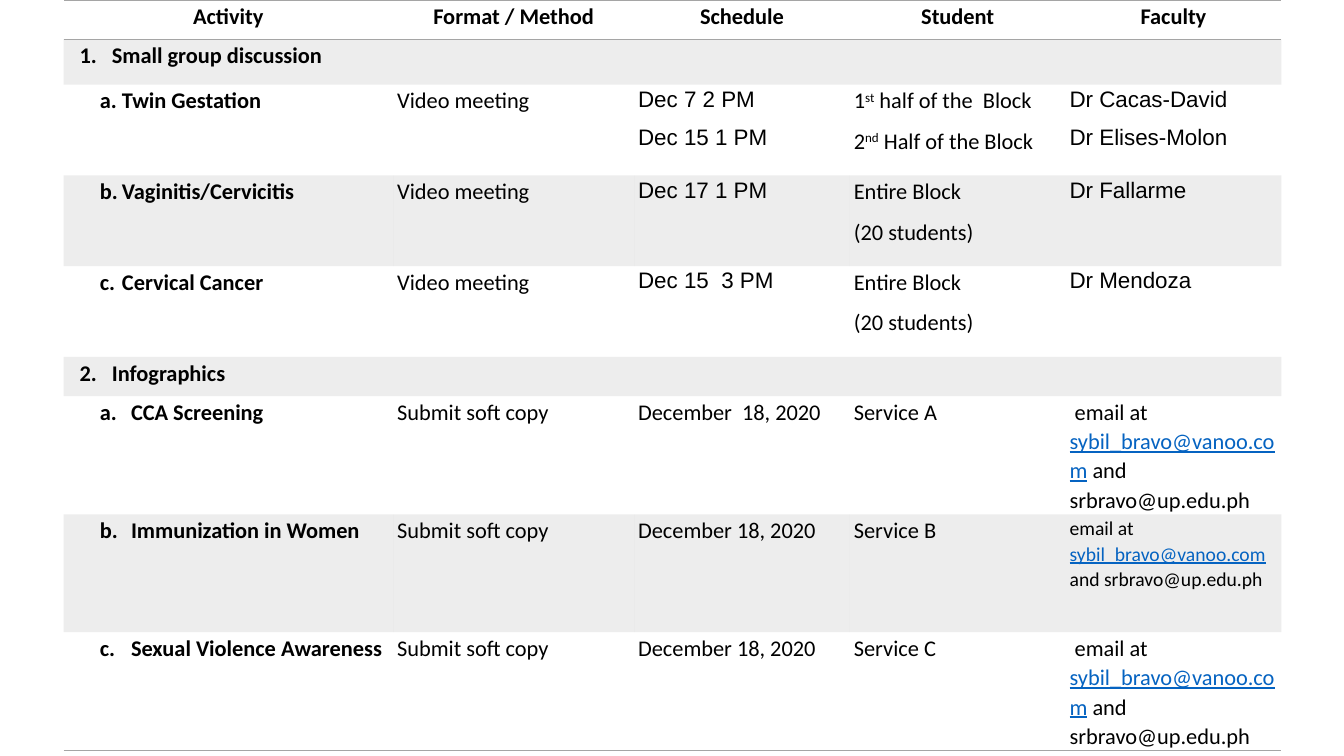
import pptx
import pptx.dml.color
import pptx.enum.text
import pptx.oxml
import pptx.oxml.ns
import pptx.util

Inches = pptx.util.Inches
Pt = pptx.util.Pt
qn = pptx.oxml.ns.qn

COLORS = {"text": "000000", "link": "0563C1", "rule": "A5A5A5"}
NO_STYLE = "{2D5ABB26-0587-4C30-8999-92F81FD0307C}"
COL_WIDTHS = [3.27, 2.39, 2.14, 2.14, 2.14]
ROW_HEIGHTS = [0.39, 0.45, 0.9, 0.9, 0.9, 0.39, 0.9, 1.17, 0.9]

# Run formats
BASE = {"name": "Calibri", "size": Pt(16), "bold": False}
BOLD = {"bold": True}
ARIAL = {"name": "Arial"}
LINK = {"underline": True}
SMALL = {"size": Pt(14)}

# Indents of the activity column: left margin and hanging label
SECTION = (0.44, -0.32)
TOPIC = (0.54, -0.22)
INFOGRAPHIC = (0.63, -0.31)

HEADERS = ["Activity", "Format / Method", "Schedule", "Student", "Faculty"]


def plain(*lines, **fmt):
    """One paragraph per line, each with a single run."""
    return [[(line, fmt)] for line in lines]


def half(number, suffix, rest):
    return [(number, {}), (suffix, {"superscript": True}), (rest, {})]


def email(lead, fmt):
    return [[(lead, fmt), ("sybil_bravo@vanoo.com", {**fmt, **LINK}),
             (" and srbravo@up.edu.ph", fmt)]]


def discussion(label, schedule, students, faculty):
    return TOPIC, [plain(label, **BOLD), plain("Video meeting"),
                   plain(*schedule, **ARIAL), students, plain(*faculty, **ARIAL)]


def infographic(label, date, service, contact):
    return INFOGRAPHIC, [plain(label, **BOLD), plain("Submit soft copy"),
                         plain(date), plain(service), contact]


def section(label):
    return SECTION, [plain(label, **BOLD)]


def table_rows():
    halves = [half("1", "st", " half of the  Block"),
              half("2", "nd", " Half of the Block")]
    block = plain("Entire Block", "(20 students)")
    return [
        (None, [plain(h, **BOLD) for h in HEADERS]),
        section("1.\tSmall group discussion"),
        discussion("a.\tTwin Gestation", ["Dec 7 2 PM", "Dec 15 1 PM"],
                   halves, ["Dr Cacas-David", "Dr Elises-Molon"]),
        discussion("b.\tVaginitis/Cervicitis", ["Dec 17 1 PM"],
                   block, ["Dr Fallarme"]),
        discussion("c.\tCervical Cancer", ["Dec 15  3 PM"],
                   block, ["Dr Mendoza"]),
        section("2.\tInfographics"),
        infographic("a.\tCCA Screening", "December  18, 2020", "Service A",
                    email(" email at ", {})),
        infographic("b.\tImmunization in Women", "December 18, 2020",
                    "Service B", email("email at ", SMALL)),
        infographic("c.\tSexual Violence Awareness", "December 18, 2020",
                    "Service C", email(" email at ", {})),
    ]


def add_run(p, text, fmt):
    r = p.add_run()
    r.text = text
    for key, value in {**BASE, **fmt}.items():
        if key == "superscript":
            r.font._element.set("baseline", "30000")
        else:
            setattr(r.font, key, value)
    color = COLORS["link" if "underline" in fmt else "text"]
    r.font.color.rgb = pptx.dml.color.RGBColor.from_string(color)


def fill_text(cell, paragraphs, align, indent=None):
    margins = {"margin_left": 0.04, "margin_right": 0.04,
               "margin_top": 0.01, "margin_bottom": 0}
    for key, value in margins.items():
        setattr(cell, key, Inches(value))
    tf = cell.text_frame
    for i, runs in enumerate(paragraphs):
        p = tf.add_paragraph() if i else tf.paragraphs[0]
        layout = {"alignment": align, "line_spacing": 1.07, "space_after": Pt(8)}
        for key, value in layout.items():
            setattr(p, key, value)
        if indent:
            pPr = p._p.get_or_add_pPr()
            for key, value in zip(("marL", "indent"), indent):
                pPr.set(key, str(Inches(value)))
        for text, fmt in runs:
            add_run(p, text, fmt)


def shade(cell):
    """Grey at 20 % opacity."""
    cell.fill.solid()
    cell.fill.fore_color.rgb = pptx.dml.color.RGBColor.from_string(COLORS["rule"])
    color = cell._tc.tcPr.find(qn("a:solidFill"))[0]
    color.append(pptx.oxml.parse_xml(
        f'<a:alpha {pptx.oxml.ns.nsdecls("a")} val="20000"/>'))


def add_borders(cell, sides):
    tcPr = cell._tc.get_or_add_tcPr()
    for i, side in enumerate(sides):
        tcPr.insert(i, pptx.oxml.parse_xml(
            f'<a:ln{side} {pptx.oxml.ns.nsdecls("a")} w="{Pt(1)}"><a:solidFill>'
            f'<a:srgbClr val="{COLORS["rule"]}"/></a:solidFill></a:ln{side}>'))


def add_schedule(s, rows):
    frame = s.shapes.add_table(len(rows), len(COL_WIDTHS), Inches(0.63), Inches(0),
                               Inches(sum(COL_WIDTHS)), Inches(sum(ROW_HEIGHTS)))
    table = frame.table
    table._tbl.tblPr.find(qn("a:tableStyleId")).text = NO_STYLE
    for col, width in zip(table.columns, COL_WIDTHS):
        col.width = Inches(width)
    for row, height in zip(table.rows, ROW_HEIGHTS):
        row.height = Inches(height)

    borders = {0: "TB", len(rows) - 1: "B"}
    for i, (indent, contents) in enumerate(rows):
        align = pptx.enum.text.PP_ALIGN.LEFT if i else pptx.enum.text.PP_ALIGN.CENTER
        for j, paragraphs in enumerate(contents):
            fill_text(table.cell(i, j), paragraphs, align, None if j else indent)
        for cell in table.rows[i].cells:
            if i % 2:
                shade(cell)
            else:
                cell.fill.background()
            add_borders(cell, borders.get(i, ""))
        # Section rows hold one cell across the table
        if len(contents) == 1:
            table.cell(i, 0).merge(table.cell(i, len(COL_WIDTHS) - 1))


def main():
    prs = pptx.Presentation()
    prs.slide_width, prs.slide_height = Inches(13.33), Inches(7.5)
    s = prs.slides.add_slide(prs.slide_layouts[6])
    add_schedule(s, table_rows())
    prs.save("out.pptx")


if __name__ == "__main__":
    main()
